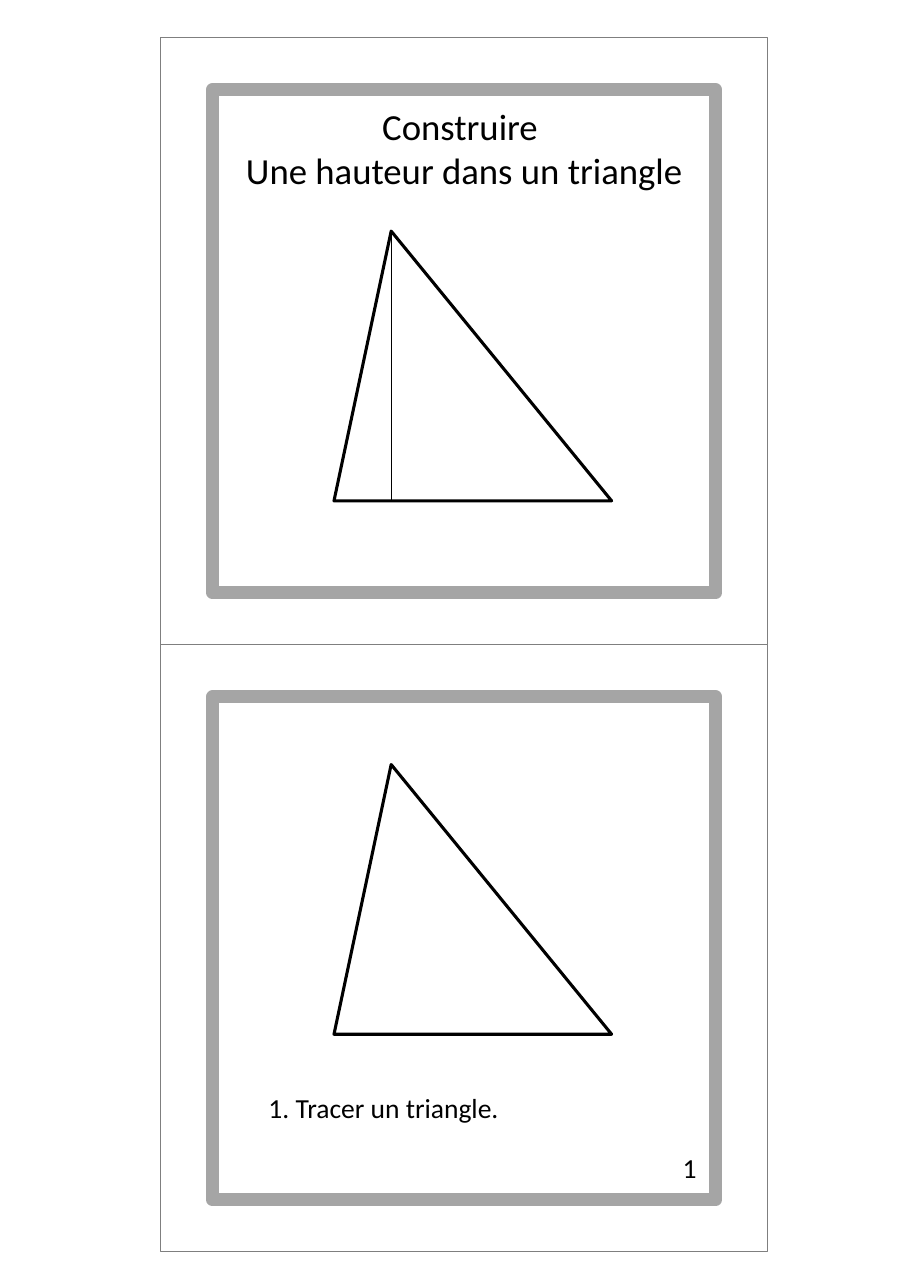
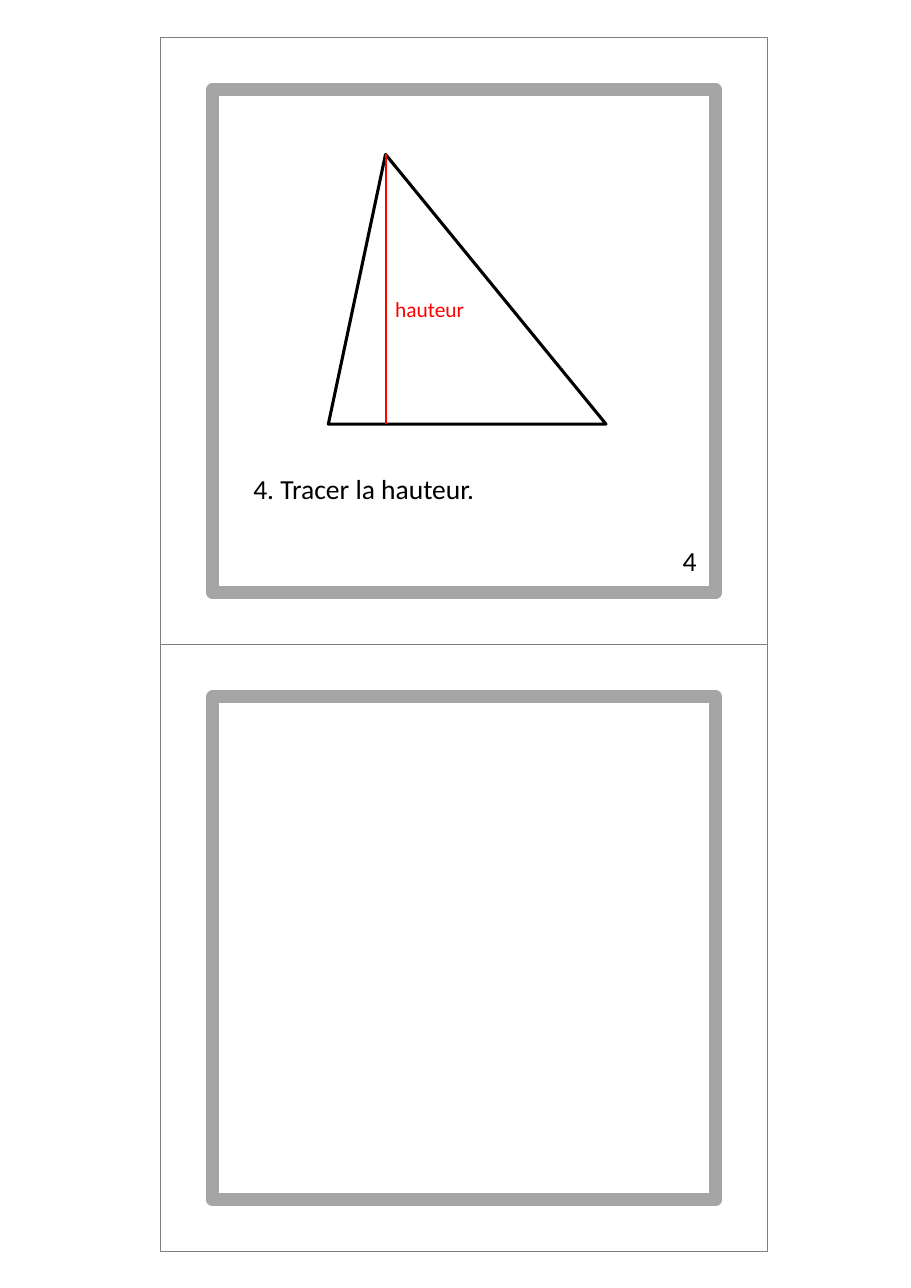
from lxml import etree
from pptx import Presentation
from pptx.dml.color import RGBColor
from pptx.enum.shapes import MSO_CONNECTOR, MSO_SHAPE
from pptx.enum.text import MSO_ANCHOR, MSO_AUTO_SIZE, PP_ALIGN
from pptx.oxml.ns import qn
from pptx.util import Cm, Pt

RECT, TRIANGLE = MSO_SHAPE.RECTANGLE, MSO_SHAPE.ISOSCELES_TRIANGLE
STRAIGHT = MSO_CONNECTOR.STRAIGHT
TOP, NO_FIT = MSO_ANCHOR.TOP, MSO_AUTO_SIZE.NONE
LEFT, CENTER, RIGHT = PP_ALIGN.LEFT, PP_ALIGN.CENTER, PP_ALIGN.RIGHT

COLORS = {"paper": "FFFFFF", "ink": "000000", "border": "7F7F7F",
          "frame": "A5A5A5", "height": "FF0000"}
FONT = "Calibri"
TITLE_ONLY, BLANK = 5, 6

# All lengths below are in centimetres
CARD = 14.0
CARD_X = 3.7
CARD_TOPS = (0.87, 14.87)
FRAME_INSET = 1.2
TRI_W, TRI_H, APEX = 6.4, 6.22, 0.206


def color(name):
    return RGBColor.from_string(COLORS[name])


def fill_paper(sp):
    sp.fill.solid()
    sp.fill.fore_color.rgb = color("paper")


def add_outline(s, kind, x, y, w, h, line, width):
    """White shape with a coloured outline."""
    sp = s.shapes.add_shape(kind, Cm(x), Cm(y), Cm(w), Cm(h))
    sp.shadow.inherit = False
    fill_paper(sp)
    sp.line.color.rgb = color(line)
    sp.line.width = Pt(width)
    return sp


def style(p, size, ink="ink", align=LEFT):
    p.alignment = align
    p.font.name = FONT
    p.font.size = Pt(size)
    p.font.color.rgb = color(ink)


def add_text(s, text, x, y, w, h, size=18, ink="ink", align=LEFT):
    tb = s.shapes.add_textbox(Cm(x), Cm(y), Cm(w), Cm(h))
    tf = tb.text_frame
    tf.word_wrap = True
    tf.text = text
    style(tf.paragraphs[0], size, ink, align)
    return tb


def add_cards(s):
    """Two cut-out cards, each with a thick inner frame."""
    side = CARD - 2 * FRAME_INSET
    for top in CARD_TOPS:
        add_outline(s, RECT, CARD_X, top, CARD, CARD, "border", 0.75)
        frame = add_outline(s, RECT, CARD_X + FRAME_INSET, top + FRAME_INSET,
                            side, side, "frame", 8.5)
    return frame


def add_triangle(s, x, y):
    sp = add_outline(s, TRIANGLE, x, y, TRI_W, TRI_H, "ink", 2)
    sp.adjustments[0] = APEX


def add_height(s, x, y, ink, width):
    """Height dropped from the apex of the triangle placed at x, y."""
    apex = Cm(x + APEX * TRI_W)
    line = s.shapes.add_connector(STRAIGHT, apex, Cm(y), apex, Cm(y + TRI_H))
    line.line.color.rgb = color(ink)
    line.line.width = Pt(width)
    etree.SubElement(line.element.spPr, qn("a:effectLst"))


def add_step(s, top, number, text, x, y):
    """Instruction and page number of the card starting at top."""
    add_text(s, f"{number}. {text}", CARD_X + x, top + y, 9, 1.02)
    badge = add_text(s, str(number), CARD_X + 11.21, top + 11.55, 1.4, 1.04,
                     align=RIGHT)
    fill_paper(badge)


def set_title(s, lines, top, behind):
    title = s.shapes.title
    behind.element.addnext(title.element)
    title.left, title.top = Cm(CARD_X + 1.6), Cm(top + 1.4)
    title.width, title.height = Cm(10.8), Cm(4.18)
    fill_paper(title)
    tf = title.text_frame
    tf.auto_size = NO_FIT
    tf.word_wrap = True
    tf.vertical_anchor = TOP
    tf.text = "\n".join(lines)
    for p in tf.paragraphs:
        style(p, 24, align=CENTER)


def build_opening(prs):
    s = prs.slides.add_slide(prs.slide_layouts[TITLE_ONLY])
    upper, lower = CARD_TOPS
    frame = add_cards(s)
    # Cover card
    set_title(s, ["Construire ", "Une hauteur dans un triangle"], upper, frame)
    x = CARD_X + 4
    add_triangle(s, x, upper + 4.46)
    add_height(s, x, upper + 4.46, "ink", 0.5)
    # First step
    add_triangle(s, x, lower + 2.76)
    add_step(s, lower, 1, "Tracer un triangle.", 2.24, 10.17)


def build_closing(prs):
    s = prs.slides.add_slide(prs.slide_layouts[BLANK])
    upper = CARD_TOPS[0]
    add_cards(s)
    # Last step; the lower card stays empty
    x, y = CARD_X + 3.87, upper + 2.69
    add_step(s, upper, 4, "Tracer la hauteur.", 1.89, 9.9)
    add_triangle(s, x, y)
    add_height(s, x, y, "height", 1.25)
    add_text(s, "hauteur", x + APEX * TRI_W - 0.03, y + 3.15, 6.8, 0.86,
             size=14, ink="height")


def main():
    prs = Presentation()
    prs.slide_width, prs.slide_height = Cm(21), Cm(29.7)
    build_opening(prs)
    build_closing(prs)
    prs.save("out.pptx")


if __name__ == "__main__":
    main()
